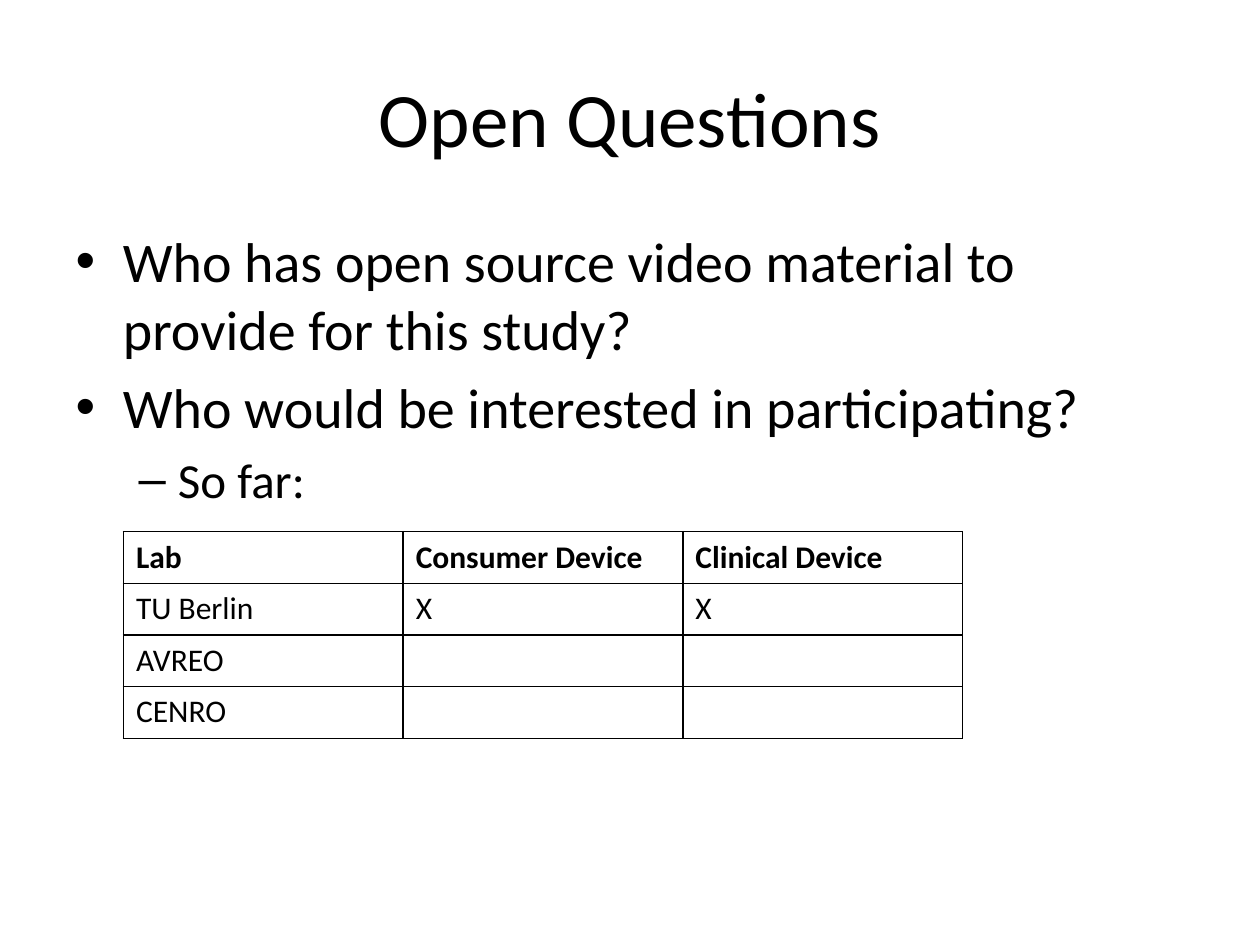
from dataclasses import dataclass

from lxml import etree
from pptx import Presentation, util as u
from pptx.dml.color import RGBColor
from pptx.enum import text
from pptx.oxml.ns import qn

BLACK = RGBColor(0x00, 0x00, 0x00)
FONT = "Calibri"


@dataclass
class Bullet:
    text: str
    level: int
    size: int


@dataclass
class LabRow:
    lab: str
    consumer: str = ""
    clinical: str = ""


BULLETS = [
    Bullet("Who has open source video material to provide for this study?", 0, 32),
    Bullet("Who would be interested in participating?", 0, 32),
    Bullet("So far:", 1, 28),
]
LAB_ROWS = [
    LabRow("Lab", "Consumer Device", "Clinical Device"),
    LabRow("TU Berlin", "X", "X"),
    LabRow("AVREO"),
    LabRow("CENRO"),
]


def write(p, content: str, *, size: int, bold: bool = False, level: int = 0, align=None) -> None:
    """Add a formatted run to a paragraph."""
    p.level = level
    if align is not None:
        p.alignment = align
    r = p.add_run()
    r.text = content
    r.font.name = FONT
    r.font.size = u.Pt(size)
    r.font.bold = bold
    r.font.color.rgb = BLACK


def place(sp, left: float, top: float, width: float, height: float) -> None:
    sp.left, sp.top = u.Inches(left), u.Inches(top)
    sp.width, sp.height = u.Inches(width), u.Inches(height)


def style_cell(cell) -> None:
    """Give a cell thin black borders and no fill."""
    tc_pr = cell._tc.get_or_add_tcPr()
    for side in ("a:lnL", "a:lnR", "a:lnT", "a:lnB"):
        ln = etree.SubElement(tc_pr, qn(side), w=str(u.Pt(1)))
        fill = etree.SubElement(ln, qn("a:solidFill"))
        etree.SubElement(fill, qn("a:srgbClr"), val=str(BLACK))
    cell.fill.background()


def add_lab_table(s, rows: list[LabRow]) -> None:
    col_width, row_height = u.Inches(2.22), u.Inches(0.41)
    table = s.shapes.add_table(len(rows), 3, u.Inches(0.98), u.Inches(4.22),
                               3 * col_width, len(rows) * row_height).table
    table.first_row = table.horz_banding = False
    for i, row in enumerate(rows):
        for j, content in enumerate((row.lab, row.consumer, row.clinical)):
            cell = table.cell(i, j)
            style_cell(cell)
            if content:
                write(cell.text_frame.paragraphs[0], content, size=18, bold=i == 0)


def main() -> None:
    prs = Presentation()
    prs.slide_width, prs.slide_height = u.Inches(10), u.Inches(7.5)
    s = prs.slides.add_slide(prs.slide_layouts[1])

    # Title
    title = s.shapes.title
    place(title, 0.5, 0.3, 9, 1.25)
    title.text_frame.vertical_anchor = text.MSO_ANCHOR.MIDDLE
    write(title.text_frame.paragraphs[0], "Open Questions", size=44,
          align=text.PP_ALIGN.CENTER)

    # Questions
    body = s.placeholders[1]
    place(body, 0.5, 1.75, 9, 4.95)
    tf = body.text_frame
    for i, bullet in enumerate(BULLETS):
        p = tf.add_paragraph() if i else tf.paragraphs[0]
        write(p, bullet.text, size=bullet.size, level=bullet.level)

    # Participating labs
    add_lab_table(s, LAB_ROWS)

    prs.save("out.pptx")


if __name__ == "__main__":
    main()
